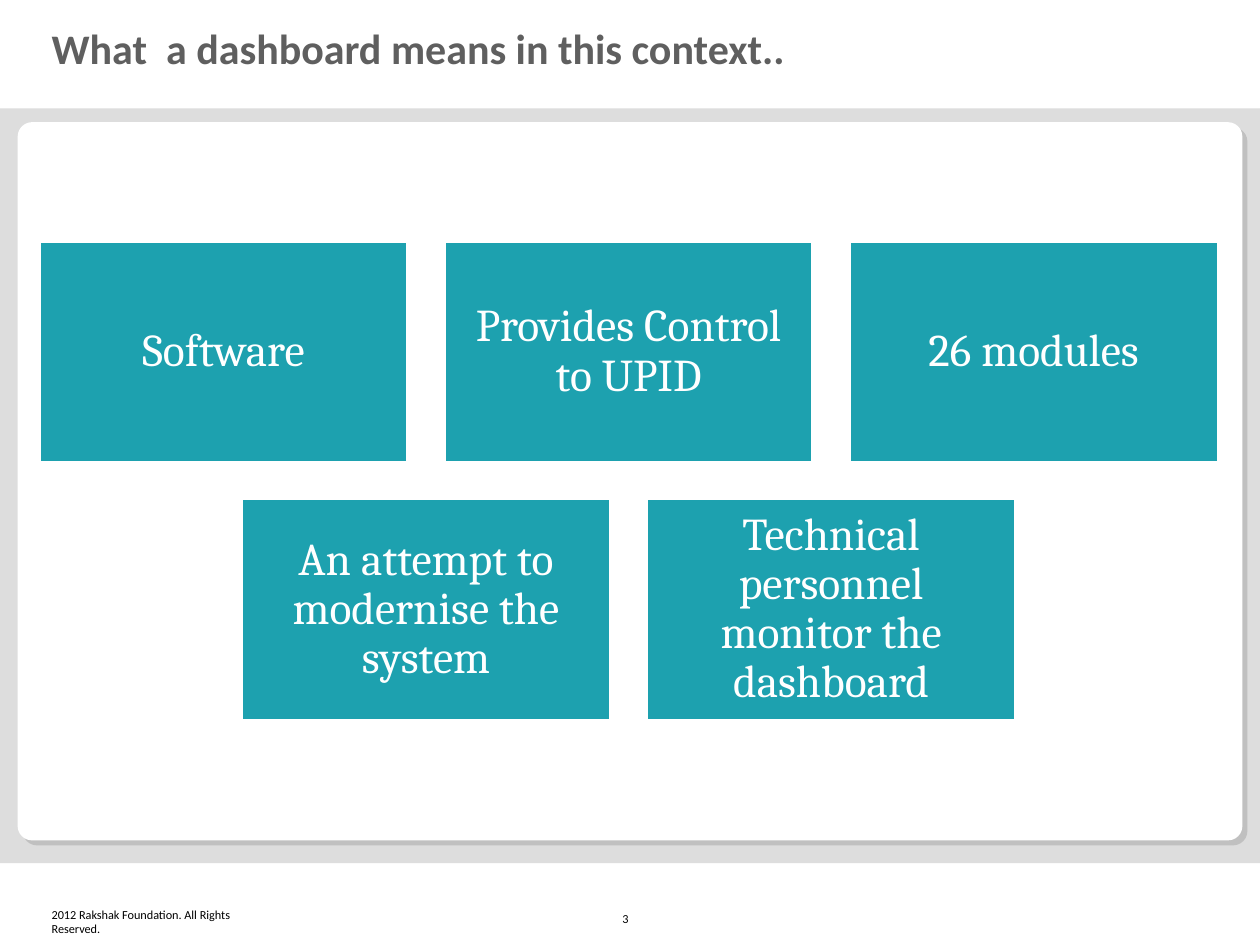
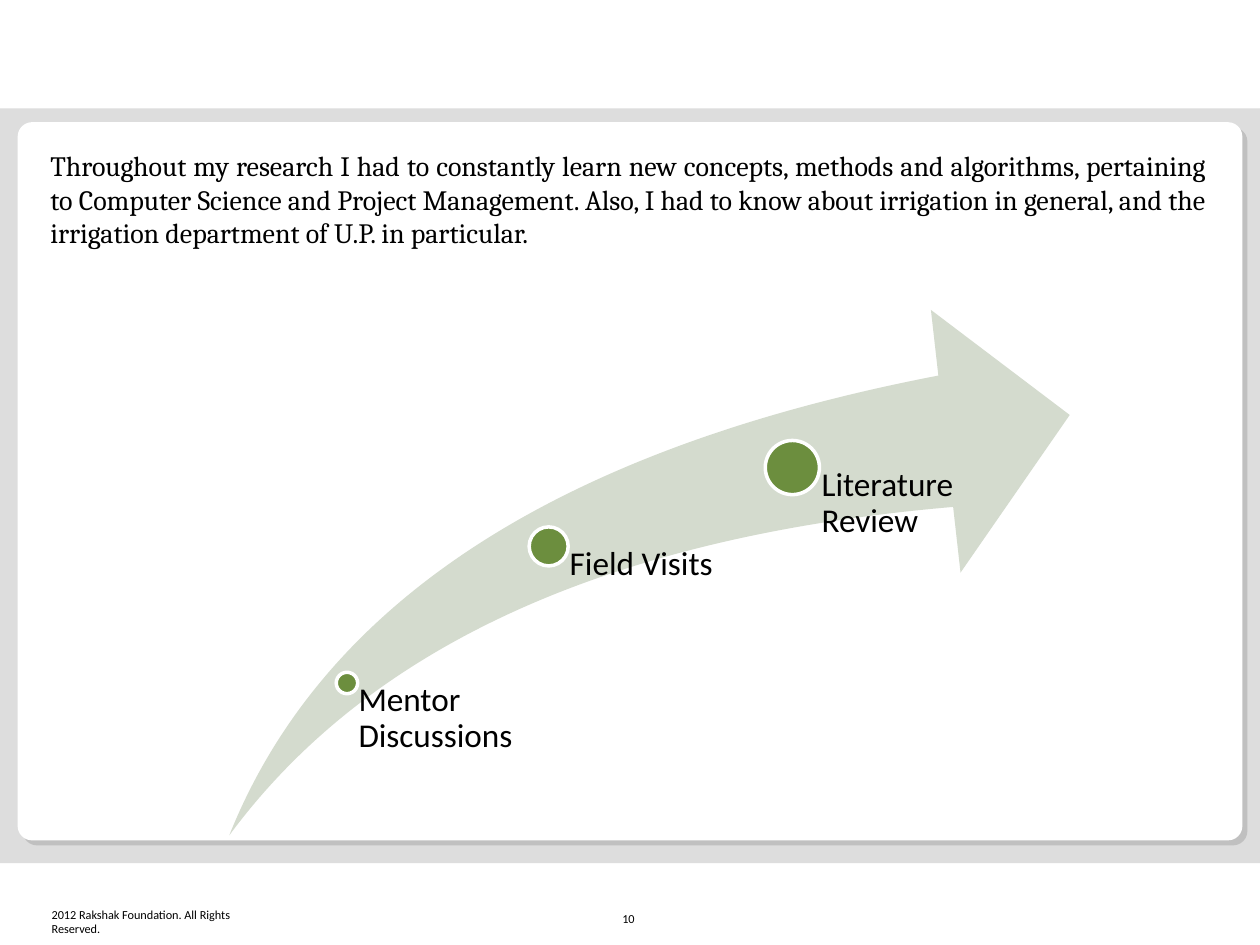
from dataclasses import dataclass
from pptx import Presentation
from pptx.dml.color import RGBColor as Rgb
from pptx.enum.shapes import MSO_SHAPE as Kind
from pptx.enum.text import MSO_ANCHOR as Anchor, MSO_AUTO_SIZE as Auto, PP_ALIGN as Align
from pptx.util import Inches, Pt


@dataclass(frozen=True)
class Theme:
    white: str = "FFFFFF"
    black: str = "000000"
    band: str = "DDDDDD"
    shade: str = "C0C0C0"
    title: str = "5F5F5F"
    tile: str = "1DA1AF"
    swoosh: str = "D4DBCE"
    dot: str = "6C8E3E"
    sans: str = "Calibri"
    serif: str = "Cambria"
    head: int = 24
    big: int = 26
    label: int = 19
    body: int = 16
    small: int = 7


look = Theme()
SIDES = ("margin_left", "margin_top", "margin_right", "margin_bottom")
AREA = (0.31, 1.14, 9.36, 5.35)
FOOT = "2012 Rakshak Foundation. All Rights Reserved."


def apply(item, values):
    for name, value in values.items():
        setattr(item, name, value)


def place(item, box):
    apply(item, dict(zip(("left", "top", "width", "height"), map(Inches, box))))


def write(item, text, size, color=look.black, face=look.sans, bold=False,
          inset=(0.1, 0.05, 0.1, 0.05), anchor=Anchor.TOP, **form):
    frame = item.text_frame
    frame.text = text
    apply(frame, {"word_wrap": True, "auto_size": Auto.NONE, "vertical_anchor": anchor})
    apply(frame, dict(zip(SIDES, map(Inches, inset))))
    para = frame.paragraphs[0]
    apply(para, {"alignment": Align.LEFT, "space_before": Pt(0), **form})
    font = para.runs[0].font
    apply(font, {"size": Pt(size), "name": face, "bold": bold})
    font.color.rgb = Rgb.from_string(color)


def note(slide, box, text, size, **form):
    write(slide.shapes.add_textbox(*map(Inches, box)), text, size, **form)


def draw(slide, kind, box, fill, edge=None, adjust=()):
    shape = slide.shapes.add_shape(kind, *map(Inches, box))
    shape.shadow.inherit = False
    shape.fill.solid()
    shape.fill.fore_color.rgb = Rgb.from_string(fill)
    if edge:
        shape.line.color.rgb = Rgb.from_string(edge)
        shape.line.width = Pt(2)
    else:
        shape.line.fill.background()
    for index, value in enumerate(adjust):
        shape.adjustments[index] = value
    return shape


def backdrop(slide, page):
    draw(slide, Kind.RECTANGLE, (0, 0.86, 10, 5.99), look.band)
    for shift, fill in ((0.04, look.shade), (0, look.white)):
        box = (0.14 + shift, 0.97 + shift, 9.72, 5.7)
        draw(slide, Kind.ROUNDED_RECTANGLE, box, fill, adjust=[0.02])
    note(slide, (0.41, 7.19, 1.65, 0.24), FOOT, look.small,
         inset=(0, 0, 0, 0), anchor=Anchor.BOTTOM)
    note(slide, (4.84, 7.06, 0.32, 0.34), str(page), look.small, anchor=Anchor.BOTTOM)


def heading(slide, text):
    title = slide.shapes.title
    place(title, (0.31, 0.19, 7.94, 0.44))
    write(title, text, look.head, look.title, bold=True,
          anchor=Anchor.MIDDLE, line_spacing=0.85)


def tiles(slide, box, rows):
    left, top, width, height = box
    wide, high = 2.93, 1.76
    gap = (width - 3 * wide) / 2
    y = top + (height - len(rows) * (high + gap) + gap) / 2
    for row in rows:
        x = left + (width - len(row) * (wide + gap) + gap) / 2
        for text in row:
            tile = draw(slide, Kind.RECTANGLE, (x, y, wide, high), look.tile, look.white)
            write(tile, text, look.big, look.white, look.serif, inset=[0.11] * 4,
                  anchor=Anchor.MIDDLE, alignment=Align.CENTER, line_spacing=0.9)
            x += wide + gap
        y += high + gap


def growth(slide, box, steps):
    left, top, width, height = box
    draw(slide, Kind.SWOOSH_ARROW, box, look.swoosh, adjust=[0.25, 0.25])
    for text, across, down, size in steps:
        x, y = left + across * width, top + down * height
        draw(slide, Kind.OVAL, (x - size / 2, y - size / 2, size, size), look.dot, look.white)
        note(slide, (x, y, 1.6, top + height - y), text, look.label,
             inset=(size * 0.54, 0, 0, 0), line_spacing=0.9)


def meaning(deck):
    slide = deck.slides.add_slide(deck.slide_layouts[5])
    backdrop(slide, 3)
    heading(slide, "What  a dashboard means in this context..")
    tiles(slide, AREA, (
        ("Software", "Provides Control to UPID", "26 modules"),
        ("An attempt to modernise the system", "Technical personnel monitor the dashboard"),
    ))


def learning(deck):
    slide = deck.slides.add_slide(deck.slide_layouts[6])
    backdrop(slide, 10)
    left, top, width, _ = AREA
    note(slide, (left, top, width, 1.11),
         "Throughout my research I had to constantly learn new concepts, methods and "
         "algorithms, pertaining to Computer Science and Project Management. Also, I had "
         "to know about irrigation in general, and the irrigation department of U.P. in "
         "particular.", look.body, face=look.serif,
         inset=(0.09, 0.04, 0.09, 0.04), alignment=Align.JUSTIFY)
    growth(slide, (left + 1.51, top + 1.32, 6.67, 4.17), (
        ("Mentor Discussions", 0.14, 0.71, 0.17),
        ("Field Visits", 0.38, 0.45, 0.31),
        ("Literature Review", 0.67, 0.3, 0.43),
    ))


def main():
    deck = Presentation()
    apply(deck, {"slide_width": Inches(10), "slide_height": Inches(7.5)})
    meaning(deck)
    learning(deck)
    deck.save("out.pptx")


if __name__ == "__main__":
    main()
